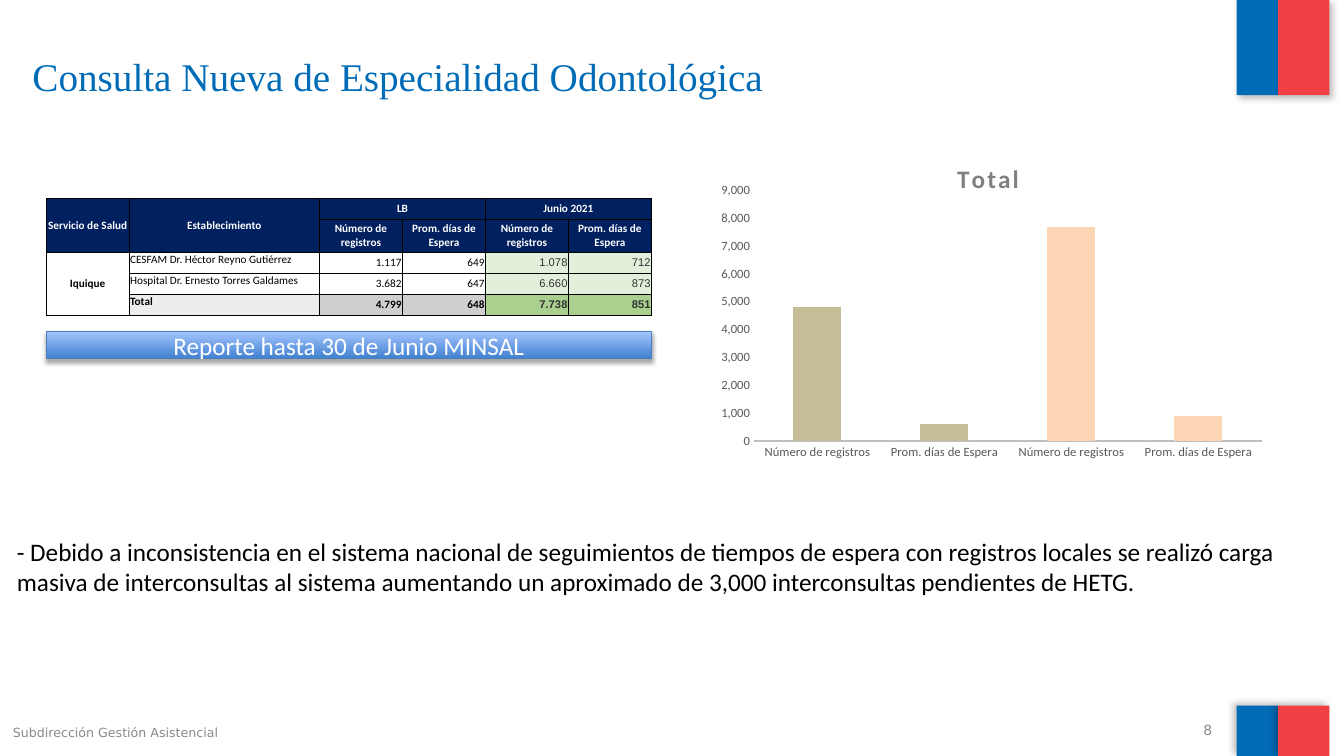
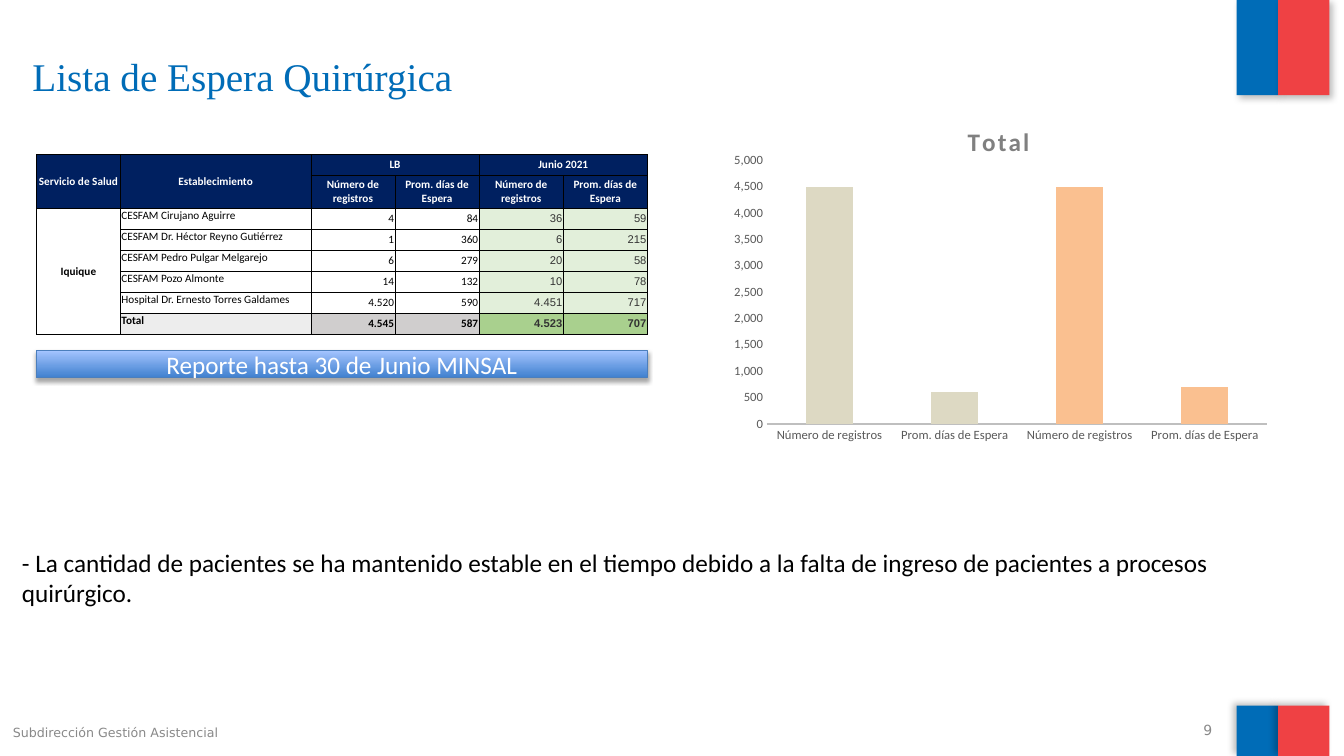
from lxml import etree
from pptx import Presentation
from pptx.chart.data import CategoryChartData
from pptx.dml.color import RGBColor
from pptx.enum.chart import XL_CHART_TYPE as CHART, XL_TICK_MARK as TICK
from pptx.enum.shapes import MSO_SHAPE as SHAPE
from pptx.enum.text import MSO_ANCHOR as ANCHOR, MSO_AUTO_SIZE as AUTO, PP_ALIGN as ALIGN
from pptx.oxml import parse_xml
from pptx.oxml.ns import nsdecls, qn
from pptx.util import Pt

# Shared style
BLUE, RED, NAVY = "006CB7", "EF4144", "002060"
BLACK, WHITE, GREY, DARK = "000000", "FFFFFF", "898989", "333333"
AXIS_TEXT, AXIS_LINE, CHART_TITLE = "595959", "BFBFBF", "808080"
BODY, TITLE, SMALL, FIGURES = "Calibri", "Times New Roman", "DejaVu Sans", "Arial"
ROW_H, SUBHEAD_H, NAME_W = 15, 23.6, 136
BANNER_GAP, BANNER_H = 11.5, 19.5
MEASURES = ["Número de registros", "Prom. días de Espera"] * 2


def rgb(color):
    return RGBColor.from_string(color)


def set_font(font, size, color, name=BODY, bold=False):
    font.size, font.name, font.bold = Pt(size), name, bold
    font.color.rgb = rgb(color)


def write(tf, text, size=18, color=BLACK, name=BODY, bold=False, align=ALIGN.LEFT,
          anchor=ANCHOR.TOP):
    tf.word_wrap = True
    tf.vertical_anchor = anchor
    p = tf.paragraphs[0]
    p.alignment = align
    r = p.add_run()
    r.text = text
    set_font(r.font, size, color, name, bold)
    return r


def add_text(slide, box, text, **fmt):
    sp = slide.shapes.add_textbox(*map(Pt, box))
    write(sp.text_frame, text, **fmt)


def add_rect(slide, box, shadow):
    """Rectangle with an outer shadow given as opacity, blur, distance, angle."""
    sp = slide.shapes.add_shape(SHAPE.RECTANGLE, *map(Pt, box))
    sp.shadow.inherit = False
    opacity, blur, dist, angle = shadow
    effects = sp._element.spPr.find(qn("a:effectLst"))
    effects.append(parse_xml(
        f'<a:outerShdw {nsdecls("a")} blurRad="{Pt(blur)}" dist="{Pt(dist)}" '
        f'dir="{angle * 60000}" algn="ctr" rotWithShape="0"><a:srgbClr val="{BLACK}">'
        f'<a:alpha val="{opacity * 1000}"/></a:srgbClr></a:outerShdw>'))
    return sp


# Title, colour bands and footer
def add_frame(slide, title, number):
    for top, height, angle in ((0, 68, 45), (504, 36, 215)):
        for left, width, color in ((883.4, 29.5, BLUE), (912.9, 36.7, RED)):
            sp = add_rect(slide, (left, top, width, height), (25, 5, 3, angle))
            sp.fill.solid()
            sp.fill.fore_color.rgb = rgb(color)
            sp.line.fill.background()

    sp = slide.shapes.title
    sp.left, sp.top, sp.width, sp.height = map(Pt, (16, 33.8, 857, 62))
    sp.text_frame.auto_size = AUTO.NONE
    write(sp.text_frame, title, size=28, color=BLUE, name=TITLE)

    add_text(slide, (2.2, 514, 304, 19), "Subdirección Gestión Asistencial",
             size=9, color=GREY, name=SMALL)
    add_text(slide, (649, 514, 224, 15), str(number), size=10, color=GREY,
             name=SMALL, align=ALIGN.RIGHT, anchor=ANCHOR.MIDDLE)


# Waiting list table
def set_borders(cell, width=0.5):
    tcPr = cell._tc.get_or_add_tcPr()
    for i, side in enumerate(("lnL", "lnR", "lnT", "lnB")):
        tcPr.insert(i, parse_xml(
            f'<a:{side} {nsdecls("a")} w="{Pt(width)}"><a:solidFill>'
            f'<a:srgbClr val="{BLACK}"/></a:solidFill></a:{side}>'))


def fill_cell(cell, text, fill=None, **fmt):
    cell.margin_left = cell.margin_right = Pt(0.7)
    cell.margin_top = cell.margin_bottom = 0
    if fill:
        cell.fill.solid()
        cell.fill.fore_color.rgb = rgb(fill)
    else:
        cell.fill.background()
    anchor = fmt.pop("anchor", ANCHOR.MIDDLE)
    write(cell.text_frame, text, size=8, **fmt)
    cell.vertical_anchor = anchor


def add_list_table(slide, left, top, width, rows):
    """Place the table and return its bottom edge."""
    heights = [ROW_H, SUBHEAD_H] + [ROW_H] * len(rows)
    frame = slide.shapes.add_table(len(heights), 6, *map(Pt, (left, top, width, sum(heights))))
    table = frame.table
    table.first_row = table.horz_banding = False
    for row, height in zip(table.rows, heights):
        row.height = Pt(height)
    for c, col in enumerate(table.columns):
        col.width = Pt(NAME_W if c == 1 else (width - NAME_W) / 5)
    for cell in table.iter_cells():
        cell.fill.background()
        set_borders(cell)

    # Merged areas: first and last cell
    for first, last in (((0, 0), (1, 0)), ((0, 1), (1, 1)), ((0, 2), (0, 3)),
                        ((0, 4), (0, 5)), ((2, 0), (len(heights) - 1, 0))):
        table.cell(*first).merge(table.cell(*last))

    # Header
    head = {(0, 0): "Servicio de Salud", (0, 1): "Establecimiento",
            (0, 2): "LB", (0, 4): "Junio 2021"}
    head.update({(1, c): text for c, text in enumerate(MEASURES, 2)})
    for pos, text in head.items():
        fill_cell(table.cell(*pos), text, NAVY, color=WHITE, bold=True, align=ALIGN.CENTER)

    # Body, closed by the total row
    fill_cell(table.cell(2, 0), "Iquique", bold=True, align=ALIGN.CENTER)
    for i, (name, *figures) in enumerate(rows):
        total = i == len(rows) - 1
        name_fill, base_fill, june_fill = (
            ("EDEDED", "D0CECE", "A9D08E") if total else (None, None, "E2EFDA"))
        fill_cell(table.cell(i + 2, 1), name, name_fill, bold=total, anchor=ANCHOR.TOP)
        for c, figure in enumerate(figures, 2):
            look = (dict(fill=base_fill) if c < 4
                    else dict(fill=june_fill, color=DARK, name=FIGURES))
            fill_cell(table.cell(i + 2, c), figure, bold=total, align=ALIGN.RIGHT, **look)
    return top + sum(heights)


def add_banner(slide, left, top, width):
    sp = add_rect(slide, (left, top, width, BANNER_H), (35, 3.1, 1.8, 90))
    sp.fill.gradient()
    sp.fill.gradient_angle = 90
    for stop, color in zip(sp.fill.gradient_stops, ("3F80CE", "A4C4FF")):
        stop.color.rgb = rgb(color)
    sp.line.color.rgb = rgb("4B7EBC")
    sp.line.width = Pt(0.75)
    write(sp.text_frame, "Reporte hasta 30 de Junio MINSAL", color=WHITE,
          align=ALIGN.CENTER, anchor=ANCHOR.MIDDLE)


# Chart of the totals
def set_plot_box(chart, box, size):
    """Fix the plot area; its box is in points inside the chart."""
    area = chart._chartSpace.chart.plotArea
    for old in area.findall(qn("c:layout")):
        area.remove(old)
    layout = etree.Element(qn("c:layout"))
    manual = etree.SubElement(layout, qn("c:manualLayout"))
    settings = [("layoutTarget", "inner"), ("xMode", "edge"), ("yMode", "edge")]
    shares = [round(length / whole, 4) for length, whole in zip(box, size * 2)]
    for tag, value in settings + list(zip("xywh", shares)):
        etree.SubElement(manual, qn(f"c:{tag}")).set("val", str(value))
    area.insert(0, layout)


def add_total_chart(slide, box, values, plot_box, colors, top_value, step):
    data = CategoryChartData(number_format="#,##0")
    data.categories = MEASURES
    data.add_series("Total", values)
    chart = slide.shapes.add_chart(CHART.COLUMN_CLUSTERED, *map(Pt, box), data).chart
    set_font(chart.font, 10, BLACK)
    chart.has_legend = False
    chart.has_title = True
    r = write(chart.chart_title.text_frame, "Total", color=CHART_TITLE, bold=True,
              align=ALIGN.CENTER)
    r._r.get_or_add_rPr().set("spc", "150")
    set_plot_box(chart, plot_box, box[2:])

    plot = chart.plots[0]
    plot.gap_width, plot.overlap, plot.vary_by_categories = 164, -22, False
    series = plot.series[0]
    series.invert_if_negative = False
    for i in range(len(values)):
        fill = series.points[i].format.fill
        fill.solid()
        fill.fore_color.rgb = rgb(colors[i // 2])

    for axis in (chart.category_axis, chart.value_axis):
        axis.major_tick_mark = axis.minor_tick_mark = TICK.NONE
        axis.has_major_gridlines = False
        set_font(axis.tick_labels.font, 9, AXIS_TEXT)
    line = chart.category_axis.format.line
    line.color.rgb, line.width = rgb(AXIS_LINE), Pt(1.5)
    axis = chart.value_axis
    axis.format.line.fill.background()
    axis.minimum_scale, axis.maximum_scale, axis.major_unit = 0, top_value, step
    axis.tick_labels.number_format = "#,##0"
    axis.tick_labels.number_format_is_linked = False


def add_report_slide(prs, number, title, table_box, rows, note_box, note, chart):
    slide = prs.slides.add_slide(prs.slide_layouts[5])
    add_frame(slide, title, number)
    left, top, width = table_box
    bottom = add_list_table(slide, left, top, width, rows)
    add_banner(slide, left, bottom + BANNER_GAP, width)
    # The chart shows the total row to the nearest hundred
    totals = [round(int(figure.replace(".", "")), -2) for figure in rows[-1][1:]]
    add_total_chart(slide, values=totals, **chart)
    add_text(slide, note_box, note)


REPORTS = [
    dict(
        title="Consulta Nueva de Especialidad Odontológica",
        table_box=(33, 141.8, 432.4),
        rows=[
            ("CESFAM Dr. Héctor Reyno Gutiérrez", "1.117", "649", "1.078", "712"),
            ("Hospital Dr. Ernesto Torres Galdames", "3.682", "647", "6.660", "873"),
            ("Total", "4.799", "648", "7.738", "851"),
        ],
        note_box=(5, 379.5, 920, 51),
        note="- Debido a inconsistencia en el sistema nacional de seguimientos de tiempos "
             "de espera con registros locales se realizó carga masiva de interconsultas al "
             "sistema aumentando un aproximado de 3,000 interconsultas pendientes de HETG.",
        chart=dict(box=(501.3, 103, 409, 244), plot_box=(37.2, 33, 362.8, 179),
                   colors=("C4BD97", "FCD5B5"), top_value=9000, step=1000),
    ),
    dict(
        title="Lista de Espera Quirúrgica",
        table_box=(26, 110.3, 436.5),
        rows=[
            ("CESFAM Cirujano Aguirre", "4", "84", "36", "59"),
            ("CESFAM Dr. Héctor Reyno Gutiérrez", "1", "360", "6", "215"),
            ("CESFAM Pedro Pulgar Melgarejo", "6", "279", "20", "58"),
            ("CESFAM Pozo Almonte", "14", "132", "10", "78"),
            ("Hospital Dr. Ernesto Torres Galdames", "4.520", "590", "4.451", "717"),
            ("Total", "4.545", "587", "4.523", "707"),
        ],
        note_box=(8.6, 387.4, 942.5, 51),
        note="- La cantidad de pacientes se ha mantenido estable en el tiempo debido a la "
             "falta de ingreso de pacientes a procesos quirúrgico.",
        chart=dict(box=(511.3, 77, 404, 253.5), plot_box=(36.5, 37.5, 357.5, 188.3),
                   colors=("DDD9C3", "FAC090"), top_value=5000, step=500),
    ),
]


def main():
    prs = Presentation()
    prs.slide_width, prs.slide_height = Pt(960), Pt(540)
    for number, report in enumerate(REPORTS, 8):
        add_report_slide(prs, number, **report)
    prs.save("out.pptx")


if __name__ == "__main__":
    main()
